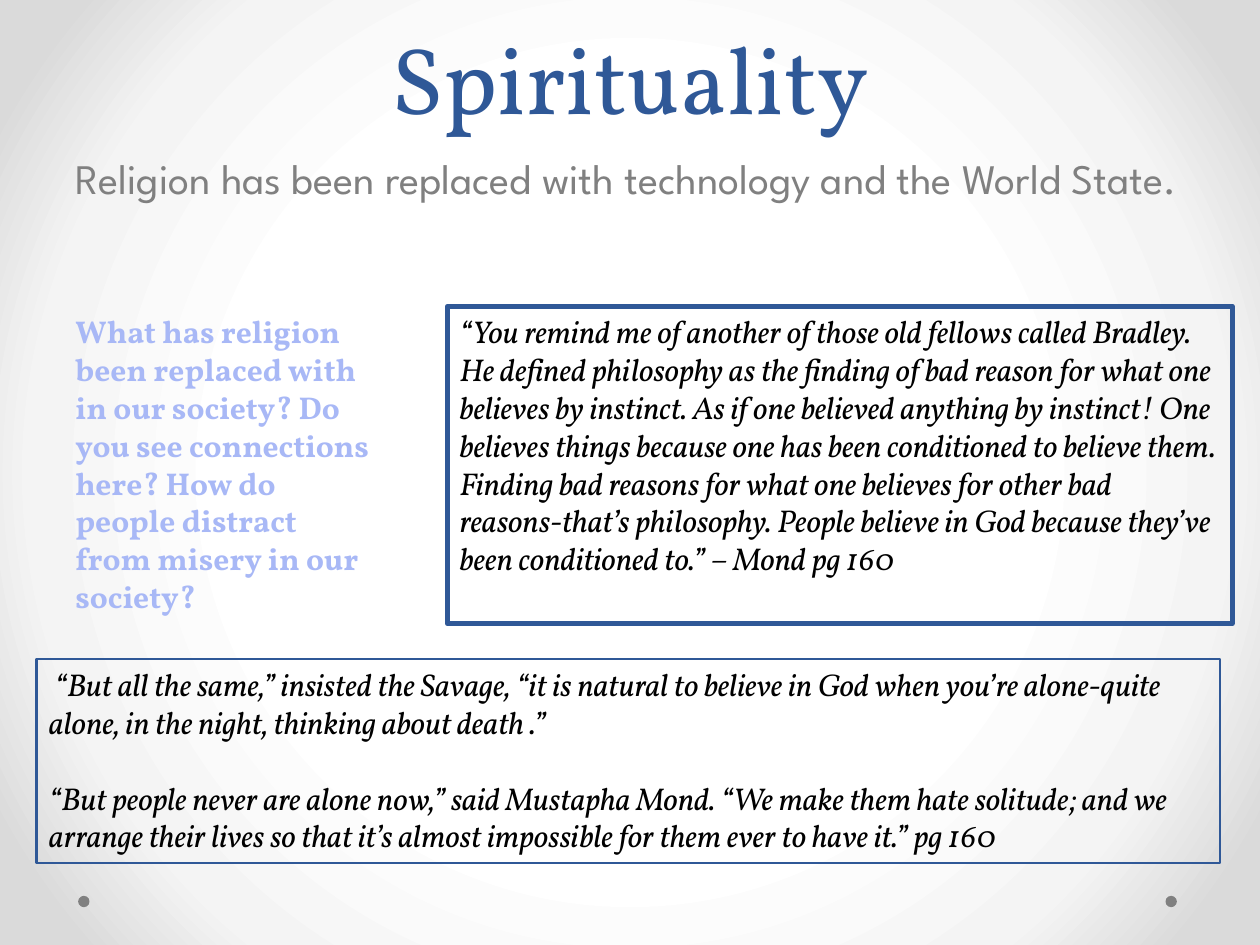
import pptx
import pptx.dml.color
import pptx.enum.shapes
import pptx.enum.text
import pptx.oxml
import pptx.oxml.ns
import pptx.util

Inches, Pt = pptx.util.Inches, pptx.util.Pt
ALIGN = pptx.enum.text.PP_ALIGN
ANCHOR = pptx.enum.text.MSO_ANCHOR
SHAPE = pptx.enum.shapes.MSO_SHAPE

WIDTH, HEIGHT = 10, 7.5
MARGIN = 0.5
ROW_TOP, ROW_HEIGHT = 2.43, 2.52
BLUE, GREY, LILAC, BLACK = "2F5897", "808080", "A8B8F6", "000000"
SERIF, SANS = "Vollkorn", "League Spartan"

INSTINCT = (
    "“You remind me of another of those old fellows called Bradley. He defined "
    "philosophy as the finding of bad reason for what one believes by instinct. "
    "As if one believed anything by instinct! One believes things because one has "
    "been conditioned to believe them. Finding bad reasons for what one believes "
    "for other bad reasons-that’s philosophy. People believe in God because "
    "they’ve been conditioned to.” – Mond pg 160"
)
SOLITUDE = [
    " “But all the same,” insisted the Savage, “it is natural to believe in God "
    "when you’re alone-quite alone, in the night, thinking about death .”",
    "“But people never are alone now,” said Mustapha Mond. “We make them hate "
    "solitude; and we arrange their lives so that it’s almost impossible for them "
    "ever to have it.” pg 160",
]
QUESTION = (
    "What has religion been replaced with in our society? Do you see connections "
    "here? How do people distract from misery in our society?"
)


def rgb(value):
    return pptx.dml.color.RGBColor.from_string(value)


def set_background(slide, stops):
    """Fill the slide with a circular gradient that starts at its centre."""
    fill = slide.background.fill
    fill.gradient()
    grad = slide.background._cSld.find(".//" + pptx.oxml.ns.qn("a:gradFill"))
    for child in list(grad):
        grad.remove(child)
    ns = pptx.oxml.ns.nsdecls("a")
    marks = "".join(
        f'<a:gs pos="{share * 1000}"><a:srgbClr val="{color}"/></a:gs>'
        for share, color in stops
    )
    grad.append(pptx.oxml.parse_xml(f"<a:gsLst {ns}>{marks}</a:gsLst>"))
    grad.append(pptx.oxml.parse_xml(
        f'<a:path {ns} path="circle">'
        '<a:fillToRect l="50000" t="50000" r="50000" b="50000"/></a:path>'
    ))


def write(sp, paragraphs, size, color, font=SERIF, bold=False, italic=False,
          align=ALIGN.LEFT, anchor=ANCHOR.TOP, gap=0, line=None):
    """Write the paragraphs into a shape, with a gap in points between them."""
    tf = sp.text_frame
    tf.word_wrap = True
    tf.vertical_anchor = anchor
    for i, text in enumerate(paragraphs):
        p = tf.add_paragraph() if i else tf.paragraphs[0]
        p.alignment = align
        p.space_before = Pt(gap if i else 0)
        if line:
            p.line_spacing = Pt(line)
        r = p.add_run()
        r.text = text
        r.font.name, r.font.size = font, Pt(size)
        r.font.bold, r.font.italic = bold, italic
        r.font.color.rgb = rgb(color)


def add_text(slide, box, paragraphs, size, color, **style):
    sp = slide.shapes.add_textbox(*map(Inches, box))
    write(sp, paragraphs, size, color, **style)


def add_quote(slide, box, paragraphs, weight):
    sp = slide.shapes.add_shape(SHAPE.RECTANGLE, *map(Inches, box))
    sp.shadow.inherit = False
    sp.fill.background()
    sp.line.color.rgb = rgb(BLUE)
    sp.line.width = Pt(weight)
    write(sp, paragraphs, 18, BLACK, italic=True, gap=21.6)


def add_dots(slide, lefts, top, size):
    for left in lefts:
        s = slide.shapes.add_shape(SHAPE.OVAL, *map(Inches, (left, top, size, size)))
        s.shadow.inherit = False
        s.fill.solid()
        s.fill.fore_color.rgb = rgb(GREY)
        s.line.fill.background()


def add_heading(slide, left, width):
    add_text(slide, (left, 0.18, width, 0.93), ["Spirituality"], 54, BLUE,
             align=ALIGN.CENTER, anchor=ANCHOR.BOTTOM, line=58)
    add_text(slide, (left, 1.16, width, 1.17),
             ["Religion has been replaced with technology and the World State."],
             24, GREY, font=SANS)


def main():
    prs = pptx.Presentation()
    prs.slide_width, prs.slide_height = Inches(WIDTH), Inches(HEIGHT)
    slide = prs.slides.add_slide(prs.slide_layouts[6])
    set_background(slide, [(50, "FFFFFF"), (76, "F4F4F4"), (92, "DADADA")])
    add_dots(slide, (9.25, 0.62), 7.11, 0.09)
    add_heading(slide, MARGIN, WIDTH - 2 * MARGIN)
    add_quote(slide, (3.55, ROW_TOP, 6.23, ROW_HEIGHT), [INSTINCT], 2.75)
    add_quote(slide, (0.29, 5.23, 9.39, 1.62), SOLITUDE, 1.25)
    add_text(slide, (MARGIN, ROW_TOP, 2.57, ROW_HEIGHT), [QUESTION], 18, LILAC,
             bold=True)
    prs.save("out.pptx")


if __name__ == "__main__":
    main()
